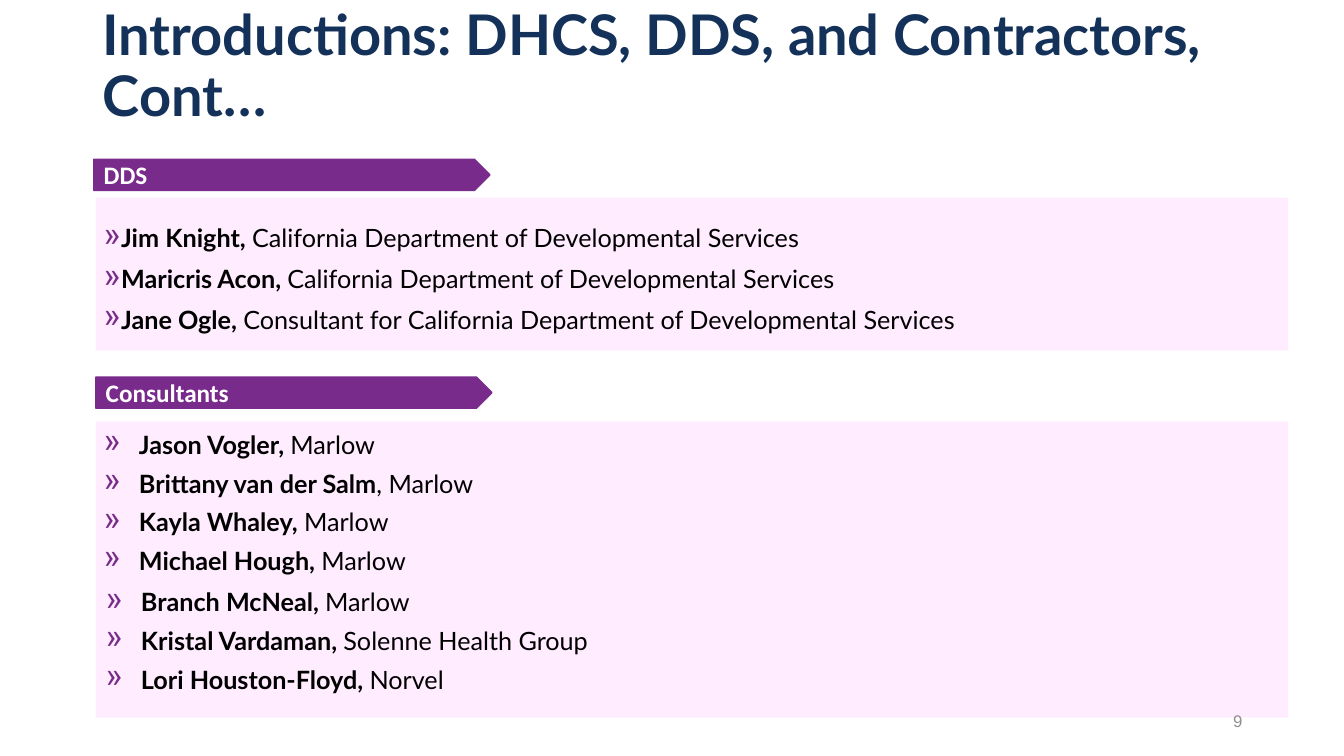
from lxml.etree import SubElement
from pptx import Presentation
from pptx.dml.color import RGBColor
from pptx.enum.shapes import MSO_SHAPE
from pptx.enum.text import MSO_ANCHOR, PP_ALIGN
from pptx.oxml.ns import qn
from pptx.util import Inches, Pt

COLORS = {"navy": "14315A", "purple": "782B8B", "pink": "FFCCFF",
          "white": "FFFFFF", "black": "000000", "gray": "8F8F8F"}
SLIDE_W, SLIDE_H = 13.33, 7.5
LEFT, PANEL_W = 0.95, 11.83
TAB_W, TAB_H = 3.93, 0.31
HANG = 0.35

AGENCY = "California Department of Developmental Services"
DDS = [("Jim Knight,\u00a0", AGENCY), ("Maricris Acon, ", AGENCY),
       ("Jane Ogle, ", "Consultant for " + AGENCY)]
CONSULTANTS = [("Jason Vogler, ", "Marlow"), ("Brittany van der Salm", ", Marlow"),
               ("Kayla Whaley, ", "Marlow"), ("Michael Hough, ", "Marlow")]
MORE_CONSULTANTS = [("Branch McNeal, ", "Marlow"),
                    ("Kristal Vardaman, ", "Solenne Health Group"),
                    ("Lori Houston-Floyd, ", "Norvel")]


def rgb(name):
    return RGBColor.from_string(COLORS[name])


def add_run(p, text, size, color, font="Lato", bold=False):
    r = p.add_run()
    r.text = text
    r.font.size, r.font.name, r.font.bold = Pt(size), font, bold
    r.font.color.rgb = rgb(color)


def add_text_frame(slide, box, anchor=MSO_ANCHOR.TOP):
    tf = slide.shapes.add_textbox(*map(Inches, box)).text_frame
    tf.word_wrap = True
    tf.vertical_anchor = anchor
    return tf


def add_block(slide, kind, box, color):
    sp = slide.shapes.add_shape(kind, *map(Inches, box))
    sp.shadow.inherit = False
    sp.fill.solid()
    sp.fill.fore_color.rgb = rgb(color)
    sp.line.fill.background()
    return sp


def add_bullet(p, margin):
    pPr = p._p.get_or_add_pPr()
    pPr.set("marL", str(Inches(margin)))
    pPr.set("indent", str(Inches(-HANG)))
    SubElement(SubElement(pPr, qn("a:buClr")), qn("a:srgbClr"), val=COLORS["purple"])
    SubElement(pPr, qn("a:buSzPct"), val="125000")
    SubElement(pPr, qn("a:buChar"), char="»")


def add_people(slide, box, people, margin=HANG, line_spacing=None):
    tf = add_text_frame(slide, box)
    for i, (name, employer) in enumerate(people):
        p = tf.paragraphs[0] if i == 0 else tf.add_paragraph()
        p.space_before = Pt(6)
        p.line_spacing = line_spacing
        add_bullet(p, margin)
        add_run(p, name, 18, "black", bold=True)
        add_run(p, employer, 18, "black")


def add_section(slide, label, tab_left, tab_top, panel_top, panel_h):
    # Arrow-shaped label
    tab = add_block(slide, MSO_SHAPE.PENTAGON, (tab_left, tab_top, TAB_W, TAB_H), "purple")
    tab.line.color.rgb = rgb("purple")
    tab.line.width = Pt(1)
    tab.text_frame.vertical_anchor = MSO_ANCHOR.MIDDLE
    p = tab.text_frame.paragraphs[0]
    p.alignment = PP_ALIGN.LEFT
    add_run(p, label, 18, "white", "Calibri", True)
    # Translucent panel
    panel = add_block(slide, MSO_SHAPE.RECTANGLE, (LEFT, panel_top, PANEL_W, panel_h), "pink")
    color = panel.fill._xPr.find(qn("a:solidFill"))[0]
    SubElement(color, qn("a:alpha"), val="34000")


def add_title(slide, box, text):
    p = add_text_frame(slide, box, MSO_ANCHOR.MIDDLE).paragraphs[0]
    p.line_spacing = 0.9
    add_run(p, text, 40, "navy", bold=True)


def add_page_number(slide, box, number):
    p = add_text_frame(slide, box, MSO_ANCHOR.MIDDLE).paragraphs[0]
    p.alignment = PP_ALIGN.RIGHT
    add_run(p, number, 12, "gray", "Arial")


def main():
    prs = Presentation()
    prs.slide_width, prs.slide_height = Inches(SLIDE_W), Inches(SLIDE_H)
    slide = prs.slides.add_slide(prs.slide_layouts[6])

    add_title(slide, (0.92, -0.02, 11.66, 1.39),
              "Introductions: DHCS, DDS, and Contractors, Cont…")

    # DDS
    add_section(slide, "DDS", 0.93, 1.58, 1.96, 1.52)
    add_people(slide, (0.93, 2.14, PANEL_W, 1.48), DDS, margin=0, line_spacing=1.07)

    # Consultants
    add_section(slide, "Consultants", LEFT, 3.74, 4.18, 2.94)
    add_people(slide, (0.93, 4.21, 5.75, 2.92), CONSULTANTS)
    add_people(slide, (LEFT, 5.77, 5.77, 1.18), MORE_CONSULTANTS)

    add_page_number(slide, (9.42, 6.95, 3, 0.4), "9")
    prs.save("out.pptx")


if __name__ == "__main__":
    main()
